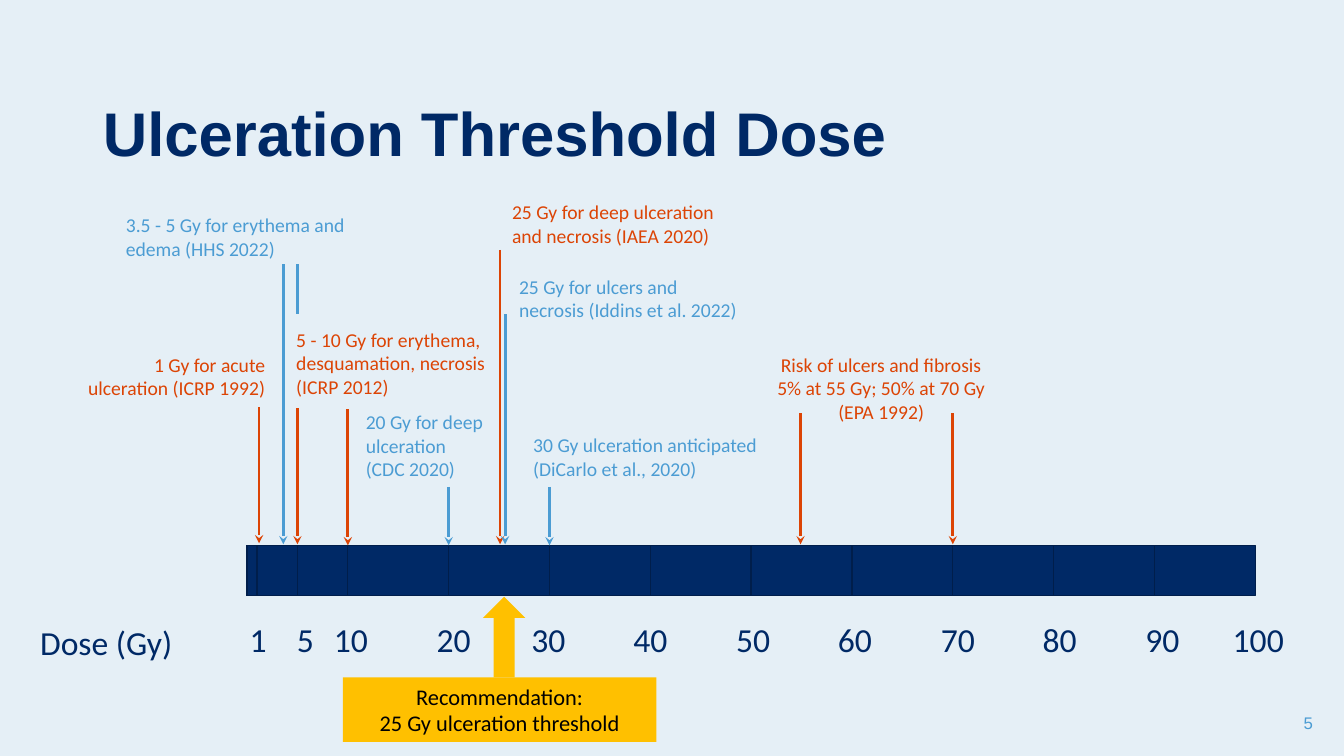
from lxml import etree
from pptx import Presentation
from pptx.dml.color import RGBColor
from pptx.enum.shapes import MSO_CONNECTOR, MSO_SHAPE
from pptx.enum.text import MSO_ANCHOR, PP_ALIGN
from pptx.oxml.ns import qn
from pptx.util import Inches, Pt

LEFT, CENTER, RIGHT = PP_ALIGN.LEFT, PP_ALIGN.CENTER, PP_ALIGN.RIGHT
MIDDLE, BOTTOM = MSO_ANCHOR.MIDDLE, MSO_ANCHOR.BOTTOM
COLORS = {
    "background": "E5EFF6",
    "navy": "002966",
    "edge": "001E4B",
    "orange": "DC4405",
    "blue": "4B9CD3",
    "yellow": "FFC000",
    "black": "000000",
}
COLORS = {name: RGBColor.from_string(value) for name, value in COLORS.items()}

deck = Presentation()
deck.slide_width, deck.slide_height = Inches(13.33), Inches(7.5)
page = deck.slides.add_slide(deck.slide_layouts[5])
page.background.fill.solid()
page.background.fill.fore_color.rgb = COLORS["background"]


def write(shape, lines, size, color, align=LEFT, anchor=MIDDLE, font="Calibri"):
    """Fill a shape with one formatted paragraph per line."""
    frame = shape.text_frame
    frame.word_wrap = True
    frame.vertical_anchor = anchor
    frame.text = "\n".join(lines)
    for para in frame.paragraphs:
        para.alignment = align
        for span in para.runs:
            span.font.name = font
            span.font.size = Pt(size)
            span.font.color.rgb = COLORS[color]


def add_box(left, top, width, height, lines, size, color, **options):
    box = page.shapes.add_textbox(Inches(left), Inches(top), Inches(width), Inches(height))
    write(box, lines, size, color, **options)


# Title
title = page.shapes.title
title.left, title.top = Inches(0.92), Inches(0.8)
title.width, title.height = Inches(11.5), Inches(1.1)
write(title, ["Ulceration Threshold Dose"], 44, "navy", font="Arial")
title.text_frame.paragraphs[0].line_spacing = 0.9
title.text_frame.paragraphs[0].runs[0].font.bold = True

# Dose scale: nested bars, one inch per 10 Gy, with the label centre under each
SCALE_LEFT, SCALE_TOP = 2.45, 5.41
label_centers = {
    100: 12.48, 90: 11.53, 80: 10.51, 70: 9.5, 60: 8.48, 50: 7.47,
    40: 6.45, 30: 5.44, 20: 4.5, 10: 3.48, 5: 3.03, 1: 2.56,
}
for dose in label_centers:
    bar = page.shapes.add_shape(
        MSO_SHAPE.RECTANGLE, Inches(SCALE_LEFT), Inches(SCALE_TOP), Inches(dose / 10), Inches(0.5))
    bar.shadow.inherit = False
    bar.fill.solid()
    bar.fill.fore_color.rgb = COLORS["navy"]
    bar.line.color.rgb = COLORS["edge"]
    bar.line.width = Pt(1)
for dose, center in label_centers.items():
    add_box(center - 0.4, 5.85, 0.8, 0.74, [str(dose)], 24, "navy", align=CENTER, anchor=BOTTOM)
add_box(0.3, 5.88, 2, 0.74, ["Dose (Gy)"], 24, "navy", anchor=BOTTOM)

# Dose markers: x, top, bottom, colour, arrowhead
markers = [
    (7.94, 4.1, 5.4, "orange", True),
    (9.45, 4.1, 5.4, "orange", True),
    (2.95, 4.05, 5.4, "orange", True),
    (3.45, 4.06, 5.41, "orange", True),
    (2.57, 4.04, 5.39, "orange", True),
    (2.81, 2.62, 5.4, "blue", True),
    (2.95, 2.62, 3.12, "blue", False),
    (4.96, 2.48, 5.4, "orange", True),
    (4.45, 4.83, 5.41, "blue", True),
    (5.45, 4.83, 5.41, "blue", True),
    (5.01, 3.12, 5.4, "blue", True),
]
for x, top, bottom, color, has_head in markers:
    marker = page.shapes.add_connector(
        MSO_CONNECTOR.STRAIGHT, Inches(x), Inches(top), Inches(x), Inches(bottom))
    marker.line.color.rgb = COLORS[color]
    marker.line.width = Pt(2)
    if has_head:
        etree.SubElement(marker.line._get_or_add_ln(), qn("a:tailEnd"), type="stealth")
    etree.SubElement(marker._element.spPr, qn("a:effectLst"))

# Findings: left, top, width, height, colour, alignment, lines
findings = [
    (7.45, 3.45, 2.58, 0.8, "orange", CENTER,
     ["Risk of ulcers and fibrosis", "5% at 55 Gy; 50% at 70 Gy", "(EPA 1992)"]),
    (0.73, 3.33, 2, 0.8, "orange", RIGHT, ["1 Gy for acute ulceration (ICRP 1992)"]),
    (2.84, 3.2, 2.16, 0.8, "orange", LEFT,
     ["5 - 10 Gy for erythema, desquamation, necrosis (ICRP 2012)"]),
    (1.15, 1.95, 2.44, 0.8, "blue", LEFT, ["3.5 - 5 Gy for erythema and edema (HHS 2022)"]),
    (4.98, 1.82, 2.29, 0.8, "orange", LEFT,
     ["25 Gy for deep ulceration and necrosis (IAEA 2020)"]),
    (3.53, 4, 1.47, 0.84, "blue", LEFT, ["20 Gy for deep ulceration", "(CDC 2020)"]),
    (5.19, 4.13, 2.46, 0.8, "blue", LEFT,
     ["30 Gy ulceration anticipated", "(DiCarlo et al., 2020)"]),
    (5.05, 2.56, 2.46, 0.8, "blue", LEFT,
     ["25 Gy for ulcers and necrosis (Iddins et al. 2022)"]),
]
for left, top, width, height, color, align, lines in findings:
    add_box(left, top, width, height, lines, 14, color, align=align)

# Recommendation callout
callout = page.shapes.add_group_shape()
banner = callout.shapes.add_shape(
    MSO_SHAPE.RECTANGLE, Inches(3.4), Inches(6.72), Inches(3.11), Inches(0.64))
pointer = callout.shapes.add_shape(
    MSO_SHAPE.UP_ARROW, Inches(4.79), Inches(5.92), Inches(0.42), Inches(0.8))
for part in (banner, pointer):
    part.shadow.inherit = False
    part.fill.solid()
    part.fill.fore_color.rgb = COLORS["yellow"]
    part.line.fill.background()
write(banner, ["Recommendation:", "25 Gy ulceration threshold"], 16, "black", align=CENTER)

# Page number
add_box(10.12, 6.97, 3, 0.4, ["5"], 12, "blue", align=RIGHT, font="Arial")

deck.save("out.pptx")
